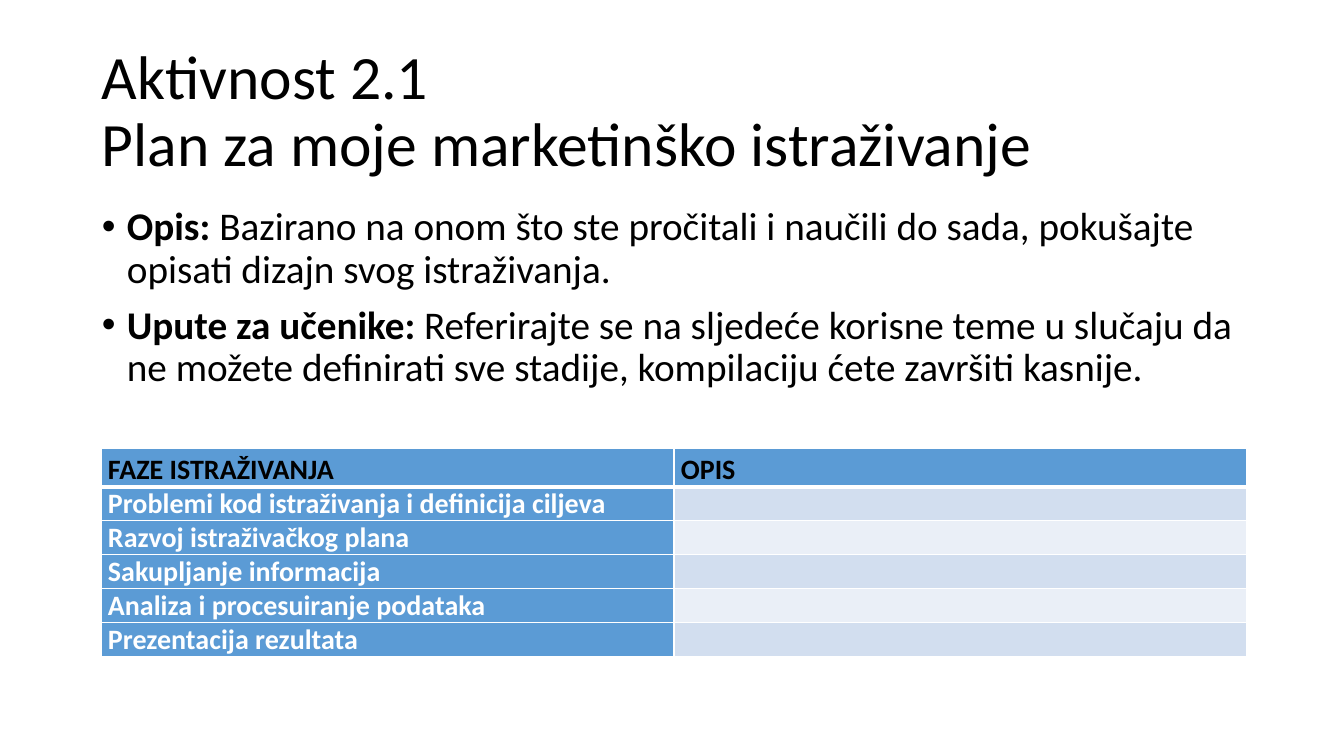
import lxml.etree
import pptx
import pptx.dml.color
import pptx.enum.text
import pptx.oxml.ns
import pptx.util

COLORS = {
    "text": "000000",
    "white": "FFFFFF",
    "blue": "5B9BD5",
    "band_dark": "D2DEEF",
    "band_light": "EAEFF7",
}
PHASES = [
    "Problemi kod istraživanja i definicija ciljeva",
    "Razvoj istraživačkog plana",
    "Sakupljanje informacija",
    "Analiza i procesuiranje podataka",
    "Prezentacija rezultata",
]


def px(n):
    return pptx.util.Emu(round(n * 914400 / 100.8))


def rgb(name):
    return pptx.dml.color.RGBColor.from_string(COLORS[name])


def sub(parent, tag, **attrs):
    return lxml.etree.SubElement(parent, pptx.oxml.ns.qn(tag), attrs)


class SlideBuilder:
    font = "Calibri"

    def __init__(self, prs):
        self.slide = prs.slides.add_slide(prs.slide_layouts[6])

    def style(self, font, size, color="text", bold=False):
        font.name = self.font
        font.size = pptx.util.Pt(size)
        font.bold = bold
        font.color.rgb = rgb(color)

    def run(self, p, text, size, color="text", bold=False):
        r = p.add_run()
        r.text = text
        self.style(r.font, size, color, bold)

    def text_box(self, x, y, w, h, anchor):
        sp = self.slide.shapes.add_textbox(px(x), px(y), px(w), px(h))
        tf = sp.text_frame
        tf.word_wrap = True
        tf.vertical_anchor = anchor
        return tf

    def title(self, x, y, w, h, lines):
        tf = self.text_box(x, y, w, h, pptx.enum.text.MSO_ANCHOR.MIDDLE)
        p = tf.paragraphs[0]
        p.line_spacing = 0.9
        for i, line in enumerate(lines):
            if i:
                p.add_line_break()
            self.run(p, line, 44)

    def bullets(self, x, y, w, h, items):
        tf = self.text_box(x, y, w, h, pptx.enum.text.MSO_ANCHOR.TOP)
        for i, (label, text) in enumerate(items):
            p = tf.add_paragraph() if i else tf.paragraphs[0]
            p.line_spacing = 0.9
            p.space_before = pptx.util.Pt(10)
            pPr = p._p.get_or_add_pPr()
            pPr.set("marL", str(px(25)))
            pPr.set("indent", str(-px(25)))
            sub(pPr, "a:buFont", typeface="Arial")
            sub(pPr, "a:buChar", char="•")
            self.run(p, label, 28, bold=True)
            self.run(p, text, 28)

    def cell(self, cell, text, fill, color="white", header=False):
        cell.margin_left = cell.margin_right = px(7)
        cell.margin_top = cell.margin_bottom = 0
        # Borders come before the fill in the cell properties
        tcPr = cell._tc.get_or_add_tcPr()
        for side in "LRTB":
            width = pptx.util.Pt(3 if header and side == "B" else 1)
            ln = sub(tcPr, "a:ln" + side, w=str(width))
            sub(sub(ln, "a:solidFill"), "a:srgbClr", val=COLORS["white"])
        cell.fill.solid()
        cell.fill.fore_color.rgb = rgb(fill)
        p = cell.text_frame.paragraphs[0]
        if header:
            p.line_spacing = 1.15
            p.space_before = pptx.util.Pt(24)
        if text:
            self.run(p, text, 20, color, bold=True)
        else:
            self.style(p.font, 20)

    def table(self, x, y, w, head, phases, head_h, row_h):
        rows = len(phases) + 1
        h = head_h + row_h * len(phases)
        gf = self.slide.shapes.add_table(rows, len(head), px(x), px(y), px(w), px(h))
        tbl = gf.table
        for row in tbl.rows:
            row.height = px(row_h)
        tbl.rows[0].height = px(head_h)
        for c, text in enumerate(head):
            self.cell(tbl.cell(0, c), text, "blue", "text", header=True)
        for r, phase in enumerate(phases, 1):
            self.cell(tbl.cell(r, 0), phase, "blue")
            self.cell(tbl.cell(r, 1), "", "band_dark" if r % 2 else "band_light")


def main():
    prs = pptx.Presentation()
    prs.slide_width, prs.slide_height = px(1344), px(756)
    s = SlideBuilder(prs)

    # Heading
    s.title(92, 40, 1159, 146,
            ["Aktivnost 2.1", "Plan za moje marketinško istraživanje"])

    # Description and instructions
    s.bullets(92, 202, 1159, 480, [
        ("Opis: ", "Bazirano na onom što ste pročitali i naučili do sada, "
                   "pokušajte opisati dizajn svog istraživanja."),
        ("Upute za učenike: ", "Referirajte se na sljedeće korisne teme u slučaju da "
                               "ne možete definirati sve stadije, kompilaciju ćete "
                               "završiti kasnije."),
    ])

    # Research phases
    s.table(101, 448, 1146, ["FAZE ISTRAŽIVANJA", "OPIS"], PHASES, 38, 34)

    prs.save("out.pptx")


if __name__ == "__main__":
    main()
